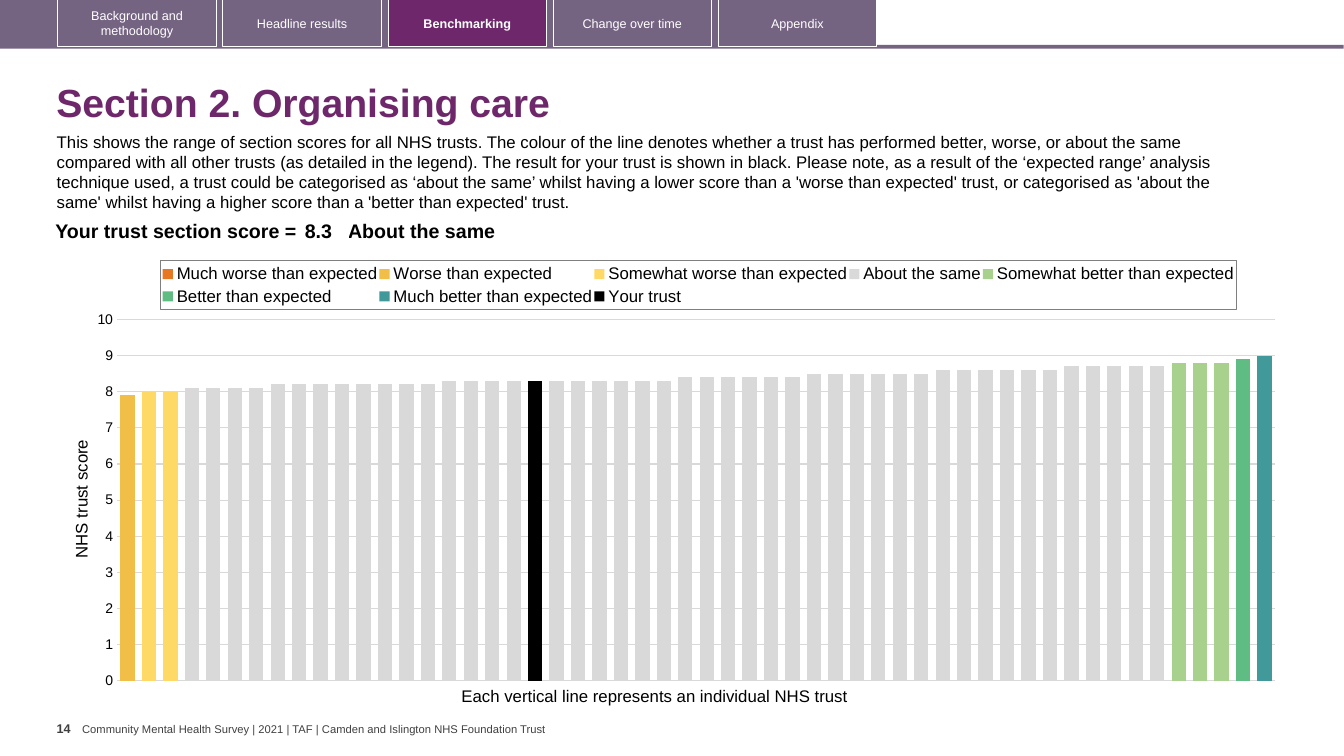
from copy import deepcopy

from pptx import Presentation
from pptx.chart.data import CategoryChartData
from pptx.dml.color import RGBColor
from pptx.enum.chart import XL_CHART_TYPE as ChartType, XL_LEGEND_POSITION as LegendPos, XL_TICK_MARK as Tick
from pptx.enum.shapes import MSO_SHAPE as Shape
from pptx.enum.text import MSO_ANCHOR as Anchor, PP_ALIGN as Align
from pptx.oxml import parse_xml
from pptx.oxml.ns import nsdecls, qn
from pptx.util import Cm, Pt

PURPLE, MAUVE, GREY, BLACK, WHITE = "6D276A", "756382", "404040", "000000", "FFFFFF"


def colour(code):
    return RGBColor.from_string(code)


def style(font, size, code, bold=False):
    font.name, font.size, font.bold = "Arial", Pt(size), bold
    font.color.rgb = colour(code)


deck = Presentation()
deck.slide_width, deck.slide_height = Cm(33.87), Cm(19.05)
page = deck.slides.add_slide(deck.slide_layouts[6])

# Navigation band and the rule below it
for top, width, height in [(1.13, 33.94, 0.1), (0, 22.17, 1.19)]:
    band = page.shapes.add_shape(Shape.RECTANGLE, Cm(-0.08), Cm(top), Cm(width), Cm(height))
    band.shadow.inherit = False
    band.fill.solid()
    band.fill.fore_color.rgb = colour(MAUVE)
    band.line.fill.background()

# Navigation tabs
tabs = ["Background and methodology", "Headline results", "Benchmarking", "Change over time", "Appendix"]
for index, label in enumerate(tabs):
    current = label == "Benchmarking"
    tab = page.shapes.add_shape(Shape.RECTANGLE, Cm(1.46 + 4.16 * index), Cm(-0.02), Cm(3.99), Cm(1.2))
    tab.shadow.inherit = False
    if current:
        tab.fill.solid()
        tab.fill.fore_color.rgb = colour(PURPLE)
    else:
        tab.fill.background()
    tab.line.color.rgb = colour(WHITE)
    tab.line.width = Pt(0.75)
    tab.text_frame.vertical_anchor = Anchor.MIDDLE
    para = tab.text_frame.paragraphs[0]
    para.text = label
    para.alignment = Align.CENTER
    style(para.font, 9, WHITE, current)

# Chart data: (series name, colour, {score: first and last trust})
TRUSTS = 54
bands = [
    ("Much worse than expected", "E87722", {}),
    ("Worse than expected", "F1BE48", {7.9: (1, 1)}),
    ("Somewhat worse than expected", "FFD966", {8: (2, 3)}),
    ("About the same", "D9D9D9", {8.1: (4, 7), 8.2: (8, 15), 8.3: (16, 26), 8.4: (27, 32),
                                  8.5: (33, 38), 8.6: (39, 44), 8.7: (45, 49)}),
    ("Somewhat better than expected", "A9D18E", {8.8: (50, 52)}),
    ("Better than expected", "5FBD83", {8.9: (53, 53)}),
    ("Much better than expected", "419999", {9: (54, 54)}),
    ("Your trust", BLACK, {8.3: (20, 20)}),
]
data = CategoryChartData()
data.categories = [str(trust) for trust in range(1, TRUSTS + 1)]
for name, code, scores in bands:
    values = [None] * TRUSTS
    for score, (first, last) in scores.items():
        values[first - 1:last] = [score] * (last - first + 1)
    data.add_series(name, values)

# Chart
chart = page.shapes.add_chart(ChartType.COLUMN_CLUSTERED, Cm(1.71), Cm(6.27), Cm(30.86), Cm(11.27), data).chart
chart.has_title = False
style(chart.font, 10, BLACK)
plot = chart.plots[0]
plot.gap_width, plot.overlap, plot.vary_by_categories = 50, 100, False
for series, (name, code, scores) in zip(plot.series, bands):
    series.format.fill.solid()
    series.format.fill.fore_color.rgb = colour(code)

# Axes
chart.category_axis.visible = False
axis = chart.value_axis
axis.minimum_scale, axis.maximum_scale, axis.major_unit = 0, 10, 1
axis.major_tick_mark = axis.minor_tick_mark = Tick.NONE
axis.tick_labels.number_format = "0"
axis.tick_labels.number_format_is_linked = False
style(axis.tick_labels.font, 10, BLACK)
axis.format.line.fill.background()
axis.major_gridlines.format.line.color.rgb = colour("D9D9D9")
axis.major_gridlines.format.line.width = Pt(0.75)
para = axis.axis_title.text_frame.paragraphs[0]
para.text = "NHS trust score"
style(para.font, 12, BLACK)

# Legend
chart.has_legend = True
legend = chart.legend
legend.position = LegendPos.TOP
legend.include_in_layout = False
style(legend.font, 12, BLACK)
border = parse_xml(f'<c:spPr {nsdecls("c", "a")}><a:ln w="9525"><a:solidFill>'
                   '<a:srgbClr val="7F7F7F"/></a:solidFill></a:ln></c:spPr>')
legend._element.find(qn("c:overlay")).addnext(border)

# Fixed places of plot, legend and axis title, as shares of the chart
area = chart._chartSpace.chart.plotArea
title = axis.axis_title._element
layouts = [
    (area, 0, {"x": 0.04, "y": 0.158, "w": 0.946, "h": 0.808}),
    (legend._element, 1, {"x": 0.076, "y": 0.027, "w": 0.878, "h": 0.109}),
    (title, 1, {"x": 0, "y": 0.42}),
]
for element, position, shares in layouts:
    for unset in element.findall(qn("c:layout")):
        element.remove(unset)
    target = '<c:layoutTarget val="inner"/>' if element is area else ""
    modes = "".join(f'<c:{key}Mode val="edge"/>' for key in "xy")
    sizes = "".join(f'<c:{key} val="{share}"/>' for key, share in shares.items())
    element.insert(position, parse_xml(
        f'<c:layout {nsdecls("c")}><c:manualLayout>{target}{modes}{sizes}</c:manualLayout></c:layout>'))

# Second axis pair, which carries the black column of the trust itself
main_bars, main_cats, main_vals = (area.find(qn(tag)) for tag in ("c:barChart", "c:catAx", "c:valAx"))
own_bars, own_cats, own_vals = (deepcopy(part) for part in (main_bars, main_cats, main_vals))
main_bars.remove(main_bars.findall(qn("c:ser"))[-1])
for series in own_bars.findall(qn("c:ser"))[:-1]:
    own_bars.remove(series)
for unwanted in ("c:majorGridlines", "c:title"):
    own_vals.remove(own_vals.find(qn(unwanted)))
CATS_ID, VALS_ID = "5001", "5002"
for reference, number in zip(own_bars.findall(qn("c:axId")), (CATS_ID, VALS_ID)):
    reference.set("val", number)
for part, number, crossed in [(own_cats, CATS_ID, VALS_ID), (own_vals, VALS_ID, CATS_ID)]:
    part.find(qn("c:axId")).set("val", number)
    part.find(qn("c:crossAx")).set("val", crossed)
for tag, value in [("c:axPos", "r"), ("c:tickLblPos", "none"), ("c:crosses", "max")]:
    own_vals.find(qn(tag)).set("val", value)
main_bars.addnext(own_bars)
main_vals.addnext(own_vals)
own_vals.addnext(own_cats)

# Texts: words, left, top, width, height, size, colour, bold, wrap, anchor, side inset, top inset
intro = ("This shows the range of section scores for all NHS trusts. The colour of the line denotes whether "
         "a trust has performed better, worse, or about the same compared with all other trusts (as detailed "
         "in the legend). The result for your trust is shown in black. Please note, as a result of the "
         "‘expected range’ analysis technique used, a trust could be categorised as ‘about the same’ whilst "
         "having a lower score than a 'worse than expected' trust, or categorised as 'about the same' whilst "
         "having a higher score than a 'better than expected' trust.")
footer = "Community Mental Health Survey | 2021 | TAF | Camden and Islington NHS Foundation Trust"
caption = "Each vertical line represents an individual NHS trust"
texts = [
    ("Section 2. Organising care", 1.17, 1.73, 31.72, 1.83, 28, PURPLE, True, True, Anchor.MIDDLE, 0.25, 0.13),
    (intro, 1.18, 3.19, 30.81, 2.31, 12, BLACK, False, True, Anchor.TOP, 0.25, 0.13),
    (caption, 11.38, 17.15, 10.44, 0.76, 12, BLACK, False, False, Anchor.TOP, 0.25, 0.13),
    ("14", 1.43, 18.03, 0.64, 1.02, 9, GREY, True, False, Anchor.TOP, 0, 0.13),
    (footer, 2.07, 18.2, 11.86, 0.33, 8, GREY, False, False, Anchor.MIDDLE, 0, 0),
]
for words, left, top, width, height, size, code, bold, wrap, anchor, side, edge in texts:
    box = page.shapes.add_textbox(Cm(left), Cm(top), Cm(width), Cm(height))
    frame = box.text_frame
    frame.word_wrap, frame.vertical_anchor = wrap, anchor
    frame.margin_left = frame.margin_right = Cm(side)
    frame.margin_top = frame.margin_bottom = Cm(edge)
    para = frame.paragraphs[0]
    para.text = words
    if code == PURPLE:
        para.line_spacing = 0.9
    style(para.font, size, code, bold)

# Section score table
table = page.shapes.add_table(1, 3, Cm(0.9), Cm(5.46), Cm(29.69), Cm(0.56)).table
table.first_row = table.horz_banding = False
columns = [("Your trust section score =", 6.68, 0.1, Align.RIGHT),
           ("8.3", 1.19, 0.1, Align.LEFT),
           ("About the same", 21.82, 0, Align.LEFT)]
for index, (words, width, side, alignment) in enumerate(columns):
    table.columns[index].width = Cm(width)
    cell = table.cell(0, index)
    cell.fill.background()
    cell.margin_left = cell.margin_right = Cm(side)
    cell.margin_top = cell.margin_bottom = Cm(0.1)
    para = cell.text_frame.paragraphs[0]
    para.text = words
    para.alignment = alignment
    style(para.font, 14, BLACK, True)

deck.save("out.pptx")
